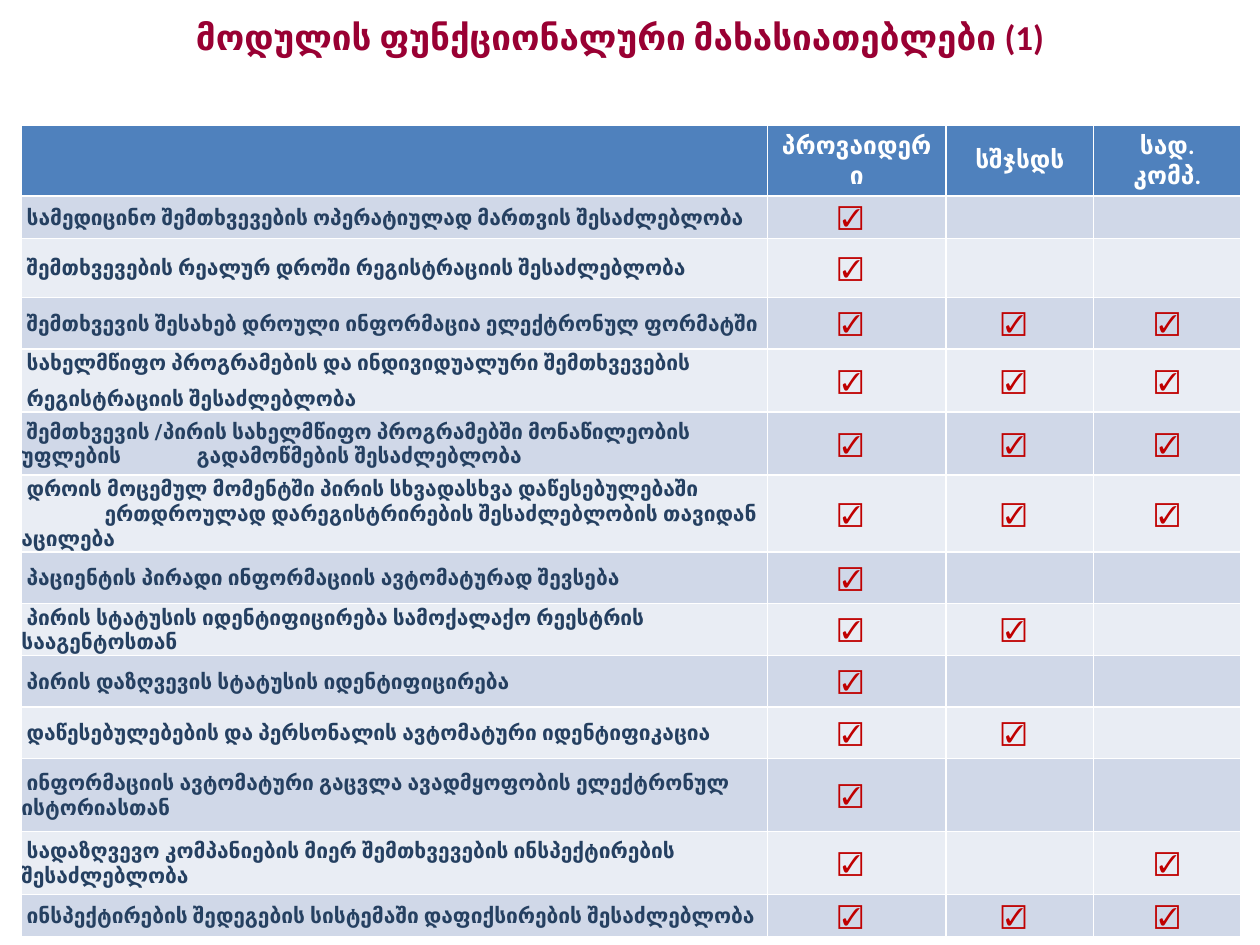
from lxml import etree
from pptx import Presentation
from pptx.dml.color import RGBColor
from pptx.enum import text
from pptx.oxml import ns
from pptx.util import Inches, Pt

HEADER_FILL = "4F81BD"
BAND_FILLS = ("D0D8E8", "E9EDF4")
HEADINGS = ("", "პროვაიდერი", "სშჯსდს", "სად. კომპ.")
COLUMN_WIDTHS = (5.92, 1.42, 1.17, 1.17)
HEADER_HEIGHT = 0.33
CHECK = "☑"
FEATURE_INSETS = (0, 0.01, 0.01, 0)
CHECK_INSETS = (0, 0.05, 0.1, 0.05)
DEFAULT_INSETS = (0.1, 0.05, 0.1, 0.05)

# feature, row height, columns ticked, tab stop
FEATURES = (
    (" სამედიცინო შემთხვევების ოპერატიულად მართვის შესაძლებლობა", 0.33, (1,), None),
    (" შემთხვევების რეალურ დროში რეგისტრაციის შესაძლებლობა", 0.47, (1,), None),
    (" შემთხვევის შესახებ დროული ინფორმაცია ელექტრონულ ფორმატში", 0.41, (1, 2, 3), None),
    (" სახელმწიფო პროგრამების და ინდივიდუალური შემთხვევების\n"
     " რეგისტრაციის შესაძლებლობა", 0.5, (1, 2, 3), None),
    (" შემთხვევის /პირის სახელმწიფო პროგრამებში მონაწილეობის "
     "უფლების\tგადამოწმების შესაძლებლობა", 0.5, (1, 2, 3), 1.39),
    (" დროის მოცემულ მომენტში პირის სხვადასხვა დაწესებულებაში\v"
     "\tერთდროულად დარეგისტრირების შესაძლებლობის თავიდან აცილება", 0.58, (1, 2, 3), 0.66),
    (" პაციენტის პირადი ინფორმაციის ავტომატურად შევსება", 0.41, (1,), None),
    (" პირის სტატუსის იდენტიფიცირება სამოქალაქო რეესტრის სააგენტოსთან", 0.41, (1, 2), None),
    (" პირის დაზღვევის სტატუსის იდენტიფიცირება", 0.41, (1,), None),
    (" დაწესებულებების და პერსონალის ავტომატური იდენტიფიკაცია", 0.41, (1, 2), None),
    (" ინფორმაციის ავტომატური გაცვლა ავადმყოფობის ელექტრონულ ისტორიასთან", 0.58, (1,), None),
    (" სადაზღვევო კომპანიების მიერ შემთხვევების ინსპექტირების შესაძლებლობა",
     0.5, (1, 3), None),
    (" ინსპექტირების შედეგების სისტემაში დაფიქსირების შესაძლებლობა", 0.33, (1, 2, 3), None),
)


def color(hex_code):
    return RGBColor.from_string(hex_code)


def style_text(frame, size, face, hex_code, centered=True, space_before=0):
    for paragraph in frame.paragraphs:
        font = paragraph.font
        font.size, font.name, font.bold = Pt(size), face, True
        font.color.rgb = color(hex_code)
        paragraph.space_before = Pt(space_before)
        paragraph.alignment = text.PP_ALIGN.CENTER if centered else text.PP_ALIGN.LEFT


def fill_cell(cell, hex_code, words="", insets=DEFAULT_INSETS):
    cell.fill.solid()
    cell.fill.fore_color.rgb = color(hex_code)
    cell.vertical_anchor = text.MSO_ANCHOR.MIDDLE
    (cell.margin_left, cell.margin_top,
     cell.margin_right, cell.margin_bottom) = map(Inches, insets)
    cell.text = words
    if not words:
        paragraph = cell.text_frame.paragraphs[0]
        etree.SubElement(paragraph._p, ns.qn("a:endParaRPr"), sz="1200")


def add_tab_stop(paragraph, position):
    properties = paragraph._p.get_or_add_pPr()
    stops = etree.Element(ns.qn("a:tabLst"))
    etree.SubElement(stops, ns.qn("a:tab"), pos=str(Inches(position)), algn="l")
    properties.find(ns.qn("a:defRPr")).addprevious(stops)


def add_title(slide):
    title = slide.shapes.add_textbox(Inches(0.42), 0, Inches(9), Inches(0.58))
    frame = title.text_frame
    frame.word_wrap = True
    frame.vertical_anchor = text.MSO_ANCHOR.MIDDLE
    frame.text = "მოდულის ფუნქციონალური მახასიათებლები (1)"
    style_text(frame, 20, "Calibri", "990033")


def fill_header(table):
    table.rows[0].height = Inches(HEADER_HEIGHT)
    for cell, heading in zip(table.rows[0].cells, HEADINGS):
        fill_cell(cell, HEADER_FILL, heading)
        style_text(cell.text_frame, 14, "Calibri", "FFFFFF")


def fill_feature_row(row, band, feature, height, ticked, tab_stop):
    row.height = Inches(height)
    for column, cell in enumerate(row.cells):
        if column == 0:
            fill_cell(cell, band, feature, FEATURE_INSETS)
            style_text(cell.text_frame, 12, "Roboto", "254061", False, 6)
            if tab_stop:
                add_tab_stop(cell.text_frame.paragraphs[0], tab_stop)
        elif column in ticked:
            fill_cell(cell, band, CHECK, DEFAULT_INSETS if column == 3 else CHECK_INSETS)
            style_text(cell.text_frame, 14, "Calibri", "C00000", space_before=6)
        else:
            fill_cell(cell, band)


def add_feature_table(slide):
    height = HEADER_HEIGHT + sum(feature[1] for feature in FEATURES)
    frame = slide.shapes.add_table(
        len(FEATURES) + 1, len(HEADINGS), Inches(0.17), Inches(0.99),
        Inches(sum(COLUMN_WIDTHS)), Inches(height))
    table = frame.table
    for column, width in zip(table.columns, COLUMN_WIDTHS):
        column.width = Inches(width)
    fill_header(table)
    for index, feature in enumerate(FEATURES):
        fill_feature_row(table.rows[index + 1], BAND_FILLS[index % 2], *feature)


def main():
    deck = Presentation()
    deck.slide_width, deck.slide_height = Inches(10), Inches(7.5)
    slide = deck.slides.add_slide(deck.slide_layouts[6])
    add_title(slide)
    add_feature_table(slide)
    deck.save("out.pptx")


if __name__ == "__main__":
    main()
